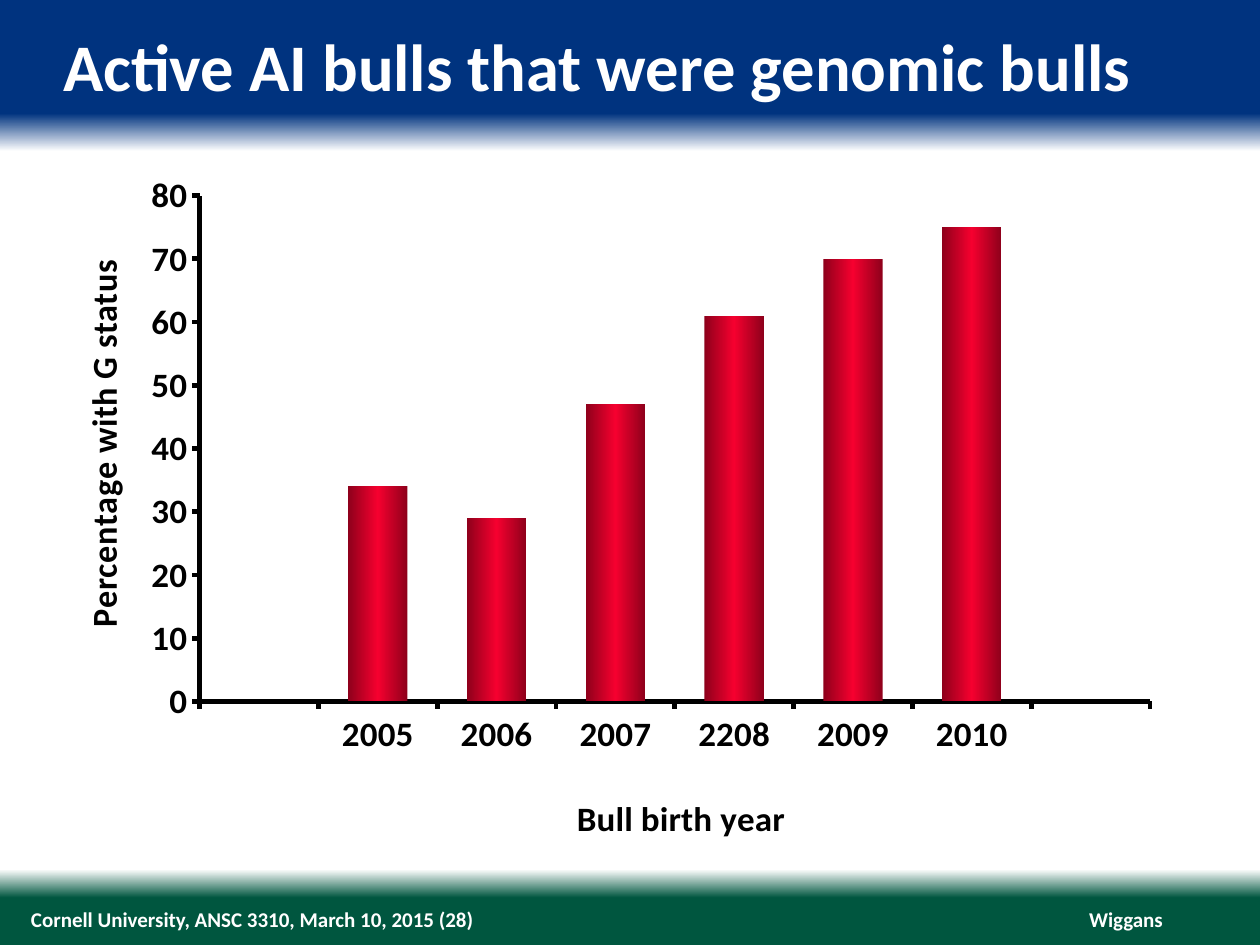
from pptx import Presentation
from pptx.chart.data import CategoryChartData
from pptx.dml.color import RGBColor
from pptx.enum.chart import XL_CHART_TYPE, XL_TICK_MARK
from pptx.enum.text import MSO_ANCHOR, PP_ALIGN
from pptx.oxml import parse_xml
from pptx.oxml.ns import nsdecls, qn
from pptx.util import Pt

PX = 914400 / 126
FONT = "Calibri"
COLORS = {
    "navy": "00337F",
    "white": "FFFFFF",
    "green": "00563F",
    "black": "000000",
    "dark_red": "8E001B",
    "red": "F6002F",
}


def px(*lengths):
    return [round(n * PX) for n in lengths]


def rgb(name):
    return RGBColor.from_string(COLORS[name])


def style_font(font, size, color):
    font.name, font.size, font.bold = FONT, Pt(size), True
    font.color.rgb = rgb(color)


def write(tf, text, size=12, color="white", align=PP_ALIGN.LEFT):
    p = tf.paragraphs[0]
    p.alignment = align
    r = p.add_run()
    r.text = text
    style_font(r.font, size, color)


def clear_margins(tf, anchor, wrap=True):
    tf.margin_left = tf.margin_right = tf.margin_top = tf.margin_bottom = 0
    tf.vertical_anchor = anchor
    tf.word_wrap = wrap


def set_gradient(fill, element, stops, angle):
    fill.gradient()
    fill.gradient_angle = angle
    gs_list = next(element.iter(qn("a:gsLst")))
    for gs in list(gs_list):
        gs_list.remove(gs)
    for position, color in stops:
        gs_list.append(parse_xml(
            f'<a:gs {nsdecls("a")} pos="{position * 1000}">'
            f'<a:srgbClr val="{COLORS[color]}"/></a:gs>'))


def set_layout(parent, inner=False, **fractions):
    old = parent.find(qn("c:layout"))
    index = 0
    if old is not None:
        index = parent.index(old)
        parent.remove(old)
    target = '<c:layoutTarget val="inner"/>' if inner else ""
    modes = '<c:xMode val="edge"/><c:yMode val="edge"/>'
    values = "".join(f'<c:{key} val="{n}"/>' for key, n in fractions.items())
    parent.insert(index, parse_xml(
        f'<c:layout {nsdecls("c")}><c:manualLayout>{target}{modes}{values}'
        '</c:manualLayout></c:layout>'))


class SlideBuilder:
    """Holds the presentation style and the current slide."""

    def __init__(self, prs):
        self.s = prs.slides.add_slide(prs.slide_layouts[5])

    def background(self, stops):
        background = self.s.background
        set_gradient(background.fill, self.s._element, stops, 270)

    def title(self, text, *box):
        sp = self.s.shapes.title
        sp.left, sp.top, sp.width, sp.height = px(*box)
        clear_margins(sp.text_frame, MSO_ANCHOR.TOP)
        write(sp.text_frame, text, size=38)

    def footer(self, text, *box, align=PP_ALIGN.LEFT, wrap=True):
        tf = self.s.shapes.add_textbox(*px(*box)).text_frame
        clear_margins(tf, MSO_ANCHOR.MIDDLE, wrap)
        write(tf, text, align=align)

    def axis(self, axis, title, rotation, x, y):
        axis.has_major_gridlines = False
        axis.major_tick_mark = XL_TICK_MARK.OUTSIDE
        axis.minor_tick_mark = XL_TICK_MARK.NONE
        axis.format.line.color.rgb = rgb("black")
        axis.format.line.width = Pt(2.75)
        tf = axis.axis_title.text_frame
        write(tf, title, size=20, color="black", align=PP_ALIGN.CENTER)
        tf._txBody.bodyPr.set("rot", str(rotation * 60000))
        set_layout(axis.axis_title._element, x=x, y=y)

    def column_chart(self, categories, values, *box):
        data = CategoryChartData()
        data.categories = categories
        data.add_series("Series 1", values)
        chart = self.s.shapes.add_chart(
            XL_CHART_TYPE.COLUMN_CLUSTERED, *px(*box), data).chart
        chart.has_legend = chart.has_title = False
        style_font(chart.font, 20, "black")
        self.axis(chart.category_axis, "Bull birth year", 0, 0.45, 0.93)
        self.axis(chart.value_axis, "Percentage with G status", -90, 0.02, 0.14)
        chart.value_axis.minimum_scale = 0
        chart.value_axis.maximum_scale = 80
        chart.value_axis.major_unit = 10
        plot = chart.plots[0]
        plot.gap_width = 100
        plot.vary_by_categories = False
        series = plot.series[0]
        series.invert_if_negative = False
        set_gradient(series.format.fill, series._element,
                     [(0, "dark_red"), (50, "red"), (100, "dark_red")], 0)
        set_layout(chart._chartSpace.chart.plotArea, inner=True,
                   x=0.13, y=0.04, w=0.82, h=0.76)


def main():
    prs = Presentation()
    prs.slide_width, prs.slide_height = px(1260, 945)
    slide = SlideBuilder(prs)
    slide.background([(0, "navy"), (12, "navy"), (16, "white"),
                      (92, "white"), (95, "green"), (100, "green")])
    slide.footer("Wiggans", 1089, 907, 74, 25, align=PP_ALIGN.RIGHT, wrap=False)
    slide.footer("Cornell University, ANSC 3310, March 10, 2015 (28)",
                 31, 907, 935, 25)
    slide.title("Active AI bulls that were genomic bulls", 63, 25, 1134, 81)
    slide.column_chart(
        ["", "2005", "2006", "2007", "2208", "2009", "2010", ""],
        [None, 34, 29, 47, 61, 70, 75, None], 49, 169, 1159, 682)
    prs.save("out.pptx")


if __name__ == "__main__":
    main()
